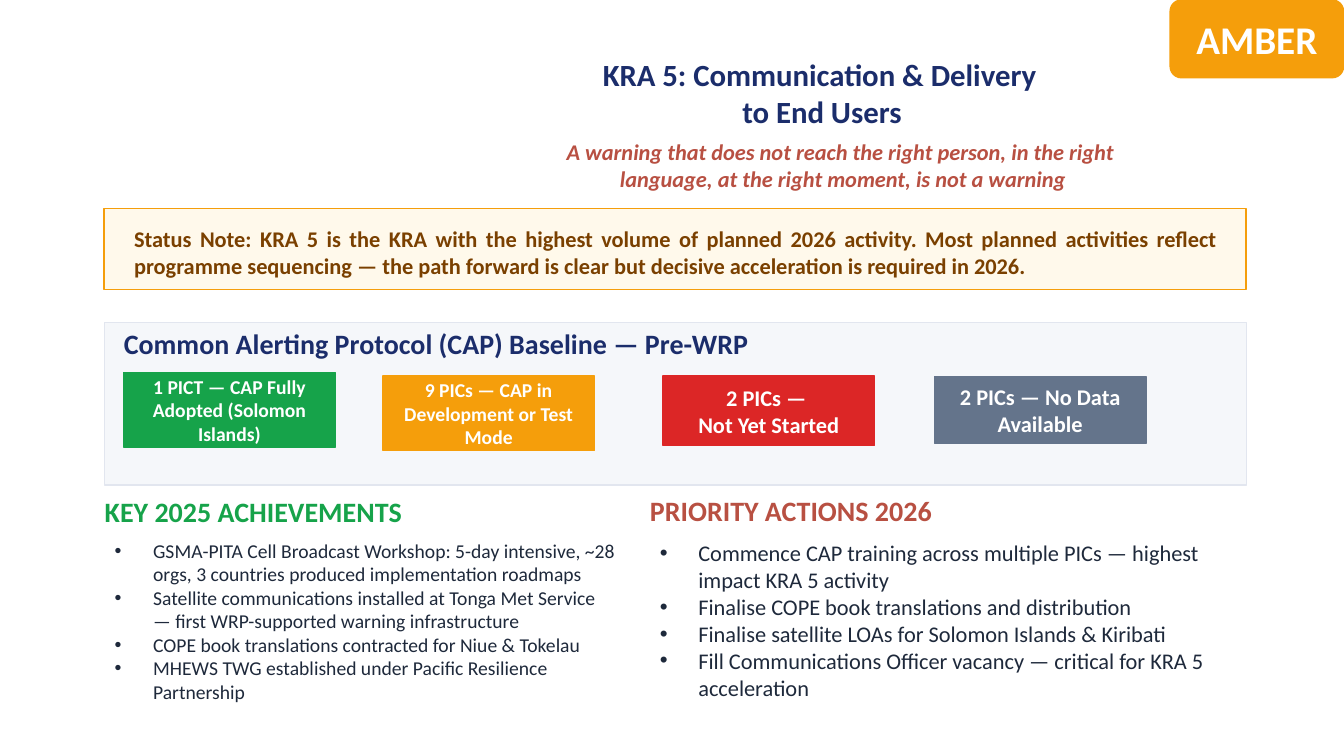
from lxml import etree
from pptx import Presentation
from pptx.dml.color import RGBColor
from pptx.enum import shapes, text
from pptx.oxml import ns
from pptx.util import Cm, Pt

NAVY = RGBColor(0x1B, 0x2D, 0x6B)
AMBER = RGBColor(0xF5, 0x9E, 0x0B)
CREAM = RGBColor(0xFF, 0xF9, 0xEB)
BROWN = RGBColor(0x7A, 0x40, 0x00)
CLAY = RGBColor(0xB8, 0x50, 0x42)
MIST = RGBColor(0xF5, 0xF7, 0xFA)
MIST_EDGE = RGBColor(0xE2, 0xE6, 0xEF)
GREEN = RGBColor(0x16, 0xA3, 0x4A)
RED = RGBColor(0xDC, 0x26, 0x26)
SLATE = RGBColor(0x64, 0x74, 0x8B)
INK = RGBColor(0x1E, 0x29, 0x3B)
WHITE = RGBColor(0xFF, 0xFF, 0xFF)

LEFT = text.PP_ALIGN.LEFT
CENTER = text.PP_ALIGN.CENTER
JUSTIFY = text.PP_ALIGN.JUSTIFY
RECT = shapes.MSO_SHAPE.RECTANGLE
ROUNDED = shapes.MSO_SHAPE.ROUNDED_RECTANGLE

TITLE = ["KRA 5: Communication & Delivery", "to End Users"]
SUBTITLE = [
    "A warning that does not reach the right person, in the right ",
    "language, at the right moment, is not a warning",
]
STATUS_NOTE = [
    "Status Note: KRA 5 is the KRA with the highest volume of planned 2026 activity. "
    "Most planned activities reflect programme sequencing — the path forward is clear "
    "but decisive acceleration is required in 2026."
]
BASELINE = ["Common Alerting Protocol (CAP) Baseline — Pre-WRP"]
CARDS = [
    (["1 PICT — CAP Fully Adopted (Solomon Islands)"], GREEN, 14, 3.12, 9.39, 1.88),
    (["9 PICs — CAP in Development or Test Mode"], AMBER, 14, 9.65, 9.48, 1.88),
    (["2 PICs — ", "Not Yet Started"], RED, 16, 16.71, 9.48, 1.75),
    (["2 PICs — No Data Available"], SLATE, 16, 23.55, 9.49, 1.68),
]
COLUMNS = [
    ("KEY 2025 ACHIEVEMENTS", GREEN, 14, 2.64, 12.52, 13.16, [
        "GSMA-PITA Cell Broadcast Workshop: 5-day intensive, ~28 orgs, "
        "3 countries produced implementation roadmaps",
        "Satellite communications installed at Tonga Met Service — "
        "first WRP-supported warning infrastructure",
        "COPE book translations contracted for Niue & Tokelau",
        "MHEWS TWG established under Pacific Resilience Partnership",
    ]),
    ("PRIORITY ACTIONS 2026", CLAY, 16, 16.38, 12.5, 14.83, [
        "Commence CAP training across multiple PICs — highest impact KRA 5 activity",
        "Finalise COPE book translations and distribution",
        "Finalise satellite LOAs for Solomon Islands & Kiribati",
        "Fill Communications Officer vacancy — critical for KRA 5 acceleration",
    ]),
]
CARD_WIDTH = 5.33
BULLET_INDENT = 0.97
LIST_DROP = 0.84
LIST_HEIGHT = 4.57


def add_bullet(para):
    props = para._p.get_or_add_pPr()
    props.set("marL", str(Cm(BULLET_INDENT)))
    props.set("indent", str(-Cm(BULLET_INDENT)))
    etree.SubElement(props, ns.qn("a:buFont")).set("typeface", "Arial")
    etree.SubElement(props, ns.qn("a:buChar")).set("char", "•")


def write(box, lines, size, color, align=LEFT, bold=True, italic=False,
          insets=(0, 0, 0, 0), bullets=False):
    frame = box.text_frame
    frame.text = "\n".join(lines)
    frame.word_wrap = True
    frame.auto_size = text.MSO_AUTO_SIZE.NONE
    frame.vertical_anchor = text.MSO_ANCHOR.MIDDLE
    frame.margin_left, frame.margin_top, frame.margin_right, frame.margin_bottom = map(Cm, insets)
    for para in frame.paragraphs:
        para.alignment = align
        if bullets:
            add_bullet(para)
        for span in para.runs:
            font = span.font
            font.name, font.size = "Calibri", Pt(size)
            font.bold, font.italic = bold, italic
            font.color.rgb = color


def add_panel(page, place, fill, edge, kind=RECT):
    panel = page.shapes.add_shape(kind, *map(Cm, place))
    panel.shadow.inherit = False
    panel.fill.solid()
    panel.fill.fore_color.rgb = fill
    panel.line.color.rgb = edge
    panel.line.width = Pt(1)
    return panel


def add_text(page, place, lines, size, color, **style):
    write(page.shapes.add_textbox(*map(Cm, place)), lines, size, color, **style)


def main():
    deck = Presentation()
    deck.slide_width, deck.slide_height = Cm(33.87), Cm(19.05)
    page = deck.slides.add_slide(deck.slide_layouts[5])

    title = page.shapes.title
    title.left, title.top, title.width, title.height = map(Cm, (15.19, 1.5, 11.05, 1.65))
    write(title, TITLE, 22, NAVY)
    title.text_frame.paragraphs[1].alignment = CENTER

    badge = add_panel(page, (29.49, 0, 4.37, 1.96), AMBER, AMBER, ROUNDED)
    badge.adjustments[0] = 0.145
    write(badge, ["AMBER"], 28, WHITE, CENTER)

    add_text(page, (14.17, 3.51, 14.15, 1.32), SUBTITLE, 16, CLAY, align=CENTER, italic=True)

    note = add_panel(page, (2.62, 5.26, 28.78, 2.03), CREAM, AMBER)
    write(note, STATUS_NOTE, 16, BROWN, JUSTIFY, insets=(0.76, 0.28, 0.71, 0.13))

    add_panel(page, (2.64, 8.13, 28.78, 4.09), MIST, MIST_EDGE)
    add_text(page, (3.12, 8.1, 16.23, 1.09), BASELINE, 20, NAVY)
    for lines, color, size, left, top, height in CARDS:
        card = add_panel(page, (left, top, CARD_WIDTH, height), color, color)
        write(card, lines, size, WHITE, CENTER, insets=(0.15,) * 4)

    for heading, color, size, left, top, width, items in COLUMNS:
        add_text(page, (left, top, width, 0.71), [heading], 20, color)
        add_text(page, (left, top + LIST_DROP, width, LIST_HEIGHT), items, size, INK,
                 bold=False, insets=(0.25, 0.13, 0.25, 0.13), bullets=True)

    deck.save("out.pptx")


if __name__ == "__main__":
    main()
